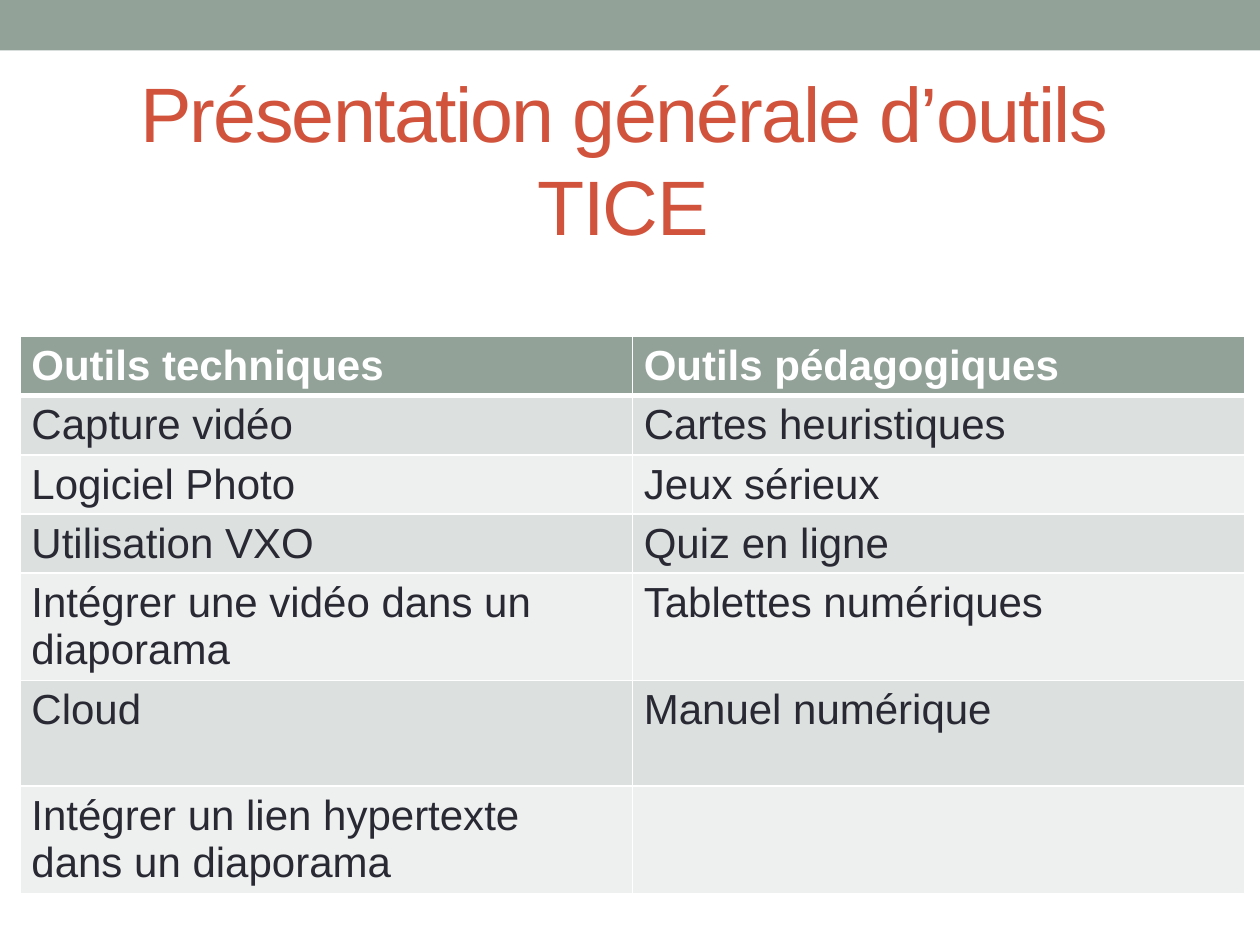
from lxml import etree
from pptx import Presentation
from pptx.dml.color import RGBColor
from pptx.enum import shapes, text
from pptx.oxml.ns import qn
from pptx.util import Inches, Pt

TITLE = "Présentation générale d’outils TICE"
TOOLS = [
    ("Outils techniques", "Outils pédagogiques"),
    ("Capture vidéo", "Cartes heuristiques"),
    ("Logiciel Photo", "Jeux sérieux"),
    ("Utilisation VXO", "Quiz en ligne"),
    ("Intégrer une vidéo dans un diaporama", "Tablettes numériques"),
    ("Cloud", "Manuel numérique"),
    ("Intégrer un lien hypertexte dans un diaporama", ""),
]
SINGLE, DOUBLE = 0.47, 0.84
ROW_HEIGHTS = [SINGLE] * 4 + [DOUBLE] * 3
COLUMN_WIDTH = 4.86

FONT = "Arial"
SAGE = RGBColor(0x93, 0xA2, 0x99)
RUST = RGBColor(0xD2, 0x53, 0x3C)
INK = RGBColor(0x29, 0x29, 0x34)
WHITE = RGBColor(0xFF, 0xFF, 0xFF)
BANDS = [RGBColor(0xEE, 0xF0, 0xEF), RGBColor(0xDC, 0xE0, 0xDE)]


def style(paragraph, size, color, bold=False):
    font = paragraph.font
    font.name, font.size, font.bold = FONT, Pt(size), bold
    font.color.rgb = color


def add_borders(cell, widths):
    """Draw white borders; widths are points for left, right, top, bottom."""
    properties = cell._tc.get_or_add_tcPr()
    for position, (side, width) in enumerate(zip("LRTB", widths)):
        line = etree.Element(qn(f"a:ln{side}"), w=str(Pt(width)))
        fill = etree.SubElement(line, qn("a:solidFill"))
        etree.SubElement(fill, qn("a:srgbClr"), val=str(WHITE))
        properties.insert(position, line)


prs = Presentation()
prs.slide_width, prs.slide_height = Inches(10), Inches(7.5)
slide = prs.slides.add_slide(prs.slide_layouts[6])

# Top band
band = slide.shapes.add_shape(shapes.MSO_SHAPE.RECTANGLE, 0, 0, prs.slide_width, Inches(0.4))
band.shadow.inherit = False
band.fill.solid()
band.fill.fore_color.rgb = SAGE
band.line.fill.background()

# Title
title = slide.shapes.add_textbox(Inches(0.4), Inches(0.63), Inches(9.09), Inches(1.25))
title.text_frame.word_wrap = True
title.text_frame.vertical_anchor = text.MSO_ANCHOR.MIDDLE
heading = title.text_frame.paragraphs[0]
heading.alignment = text.PP_ALIGN.CENTER
heading.text = TITLE
style(heading, 44.1, RUST)
heading.runs[0].font._element.set("spc", "-100")

# Table of tools
table = slide.shapes.add_table(
    len(TOOLS), 2, Inches(0.16), Inches(2.67),
    Inches(2 * COLUMN_WIDTH), Inches(sum(ROW_HEIGHTS))).table
for column in table.columns:
    column.width = Inches(COLUMN_WIDTH)
for r, (tools, height) in enumerate(zip(TOOLS, ROW_HEIGHTS)):
    table.rows[r].height = Inches(height)
    header = r == 0
    for c, tool in enumerate(tools):
        cell = table.cell(r, c)
        cell.margin_left = cell.margin_right = Inches(0.09)
        # No bottom margin, so the text fits the set row height
        cell.margin_top, cell.margin_bottom = Inches(0.05), 0
        cell.text = tool
        style(cell.text_frame.paragraphs[0], 24, WHITE if header else INK, header)
        cell.fill.solid()
        cell.fill.fore_color.rgb = SAGE if header else BANDS[r % 2]
        add_borders(cell, (1, 1, 3 if r == 1 else 1, 3 if header else 1))

prs.save("out.pptx")
